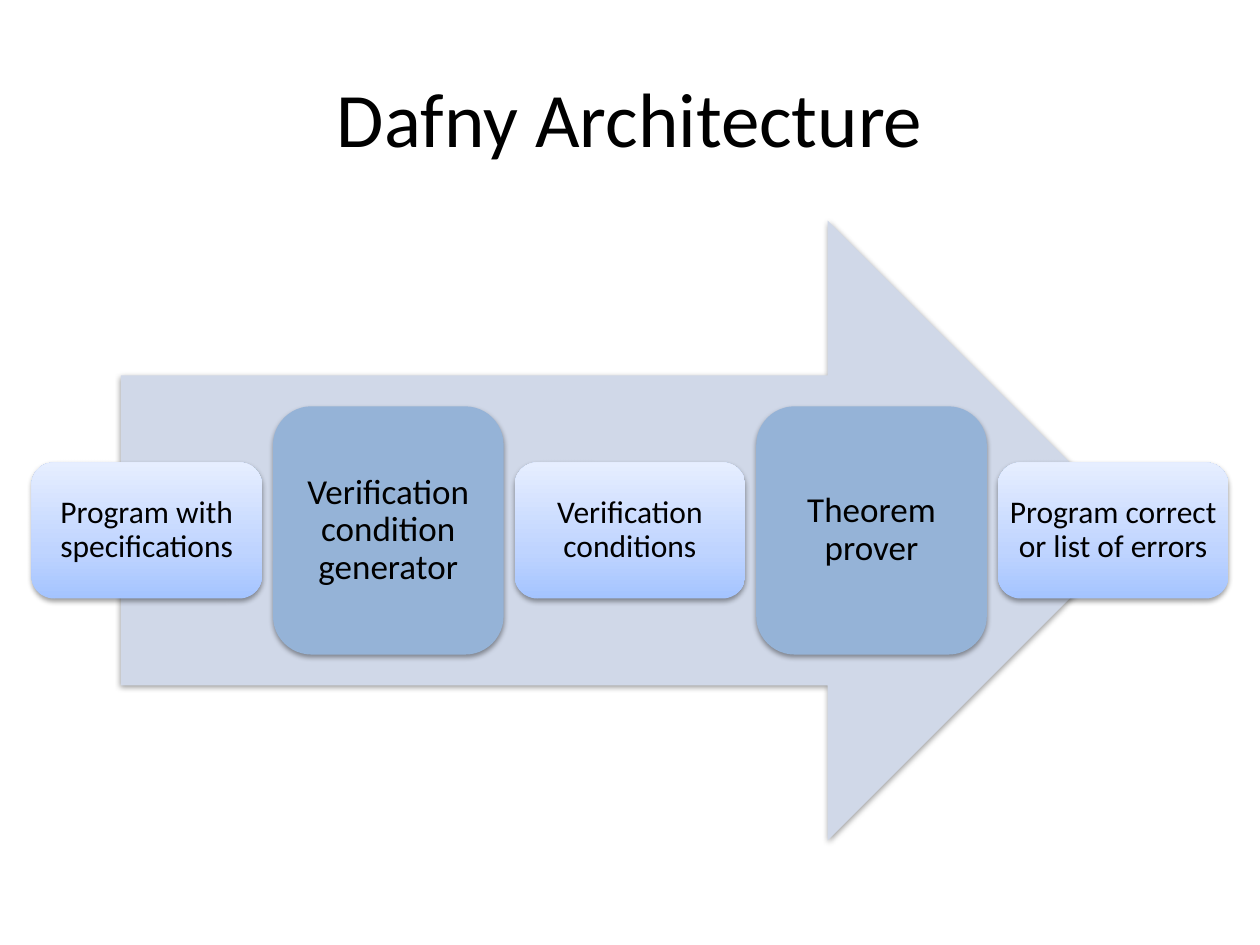
from dataclasses import dataclass

from lxml.etree import SubElement
from pptx import Presentation
from pptx.dml.color import RGBColor
from pptx.enum.shapes import MSO_SHAPE as Preset
from pptx.enum.text import MSO_ANCHOR as Anchor, PP_ALIGN as Align
from pptx.oxml.ns import qn
from pptx.shapes.autoshape import Shape
from pptx.slide import Slide
from pptx.text.text import TextFrame
from pptx.util import Inches, Pt


@dataclass(frozen=True)
class Theme:
    font: str = "Calibri"
    text: str = "000000"
    arrow: str = "D0D8E8"
    tool: str = "95B3D7"
    # Gradient stops (percent, colour), from the bottom up
    data: tuple = ((0, "A4C4FF"), (35, "BFD4FF"), (100, "E6EEFF"))
    shadow: str = "000000"
    title_size: int = 44
    tool_size: int = 20
    data_size: int = 18


@dataclass(frozen=True)
class Stage:
    label: str
    is_tool: bool = False


THEME = Theme()
STAGES = (
    Stage("Program with specifications"),
    Stage("Verification condition generator", is_tool=True),
    Stage("Verification conditions"),
    Stage("Theorem prover", is_tool=True),
    Stage("Program correct or list of errors"),
)

# Geometry in inches
SLIDE_WIDTH, SLIDE_HEIGHT = 10, 7.5
ARROW_LEFT, ARROW_TOP, ARROW_WIDTH, ARROW_HEIGHT = 0.96, 1.75, 8.07, 4.92
MIDDLE = ARROW_TOP + ARROW_HEIGHT / 2
MARGIN, STAGE_WIDTH = 0.25, 1.83
TOOL_HEIGHT, DATA_HEIGHT = 1.97, 1.08
PITCH = (SLIDE_WIDTH - 2 * MARGIN - STAGE_WIDTH) / (len(STAGES) - 1)
INSET = 0.02


def write_text(frame: TextFrame, text: str, size: int) -> None:
    """Put one centred paragraph in the frame."""
    frame.text = text
    frame.word_wrap = True
    frame.vertical_anchor = Anchor.MIDDLE
    para = frame.paragraphs[0]
    para.alignment = Align.CENTER
    for span in para.runs:
        span.font.name = THEME.font
        span.font.size = Pt(size)
        span.font.color.rgb = RGBColor.from_string(THEME.text)


def fill_solid(shape: Shape, color: str) -> None:
    shape.fill.solid()
    shape.fill.fore_color.rgb = RGBColor.from_string(color)


def fill_gradient(shape: Shape, stops: tuple) -> None:
    """Fill with a vertical gradient that runs from bottom to top."""
    shape.fill.gradient()
    shape.fill.gradient_angle = 90
    stop_list = shape.element.spPr.find(f".//{qn('a:gsLst')}")
    stop_list.clear()
    for percent, color in stops:
        stop = SubElement(stop_list, qn("a:gs"), pos=str(percent * 1000))
        SubElement(stop, qn("a:srgbClr"), val=color)


def add_shadow(shape: Shape) -> None:
    """Cast a soft shadow straight down."""
    shape.shadow.inherit = False
    effects = shape.element.spPr.find(qn("a:effectLst"))
    shadow = SubElement(
        effects, qn("a:outerShdw"), blurRad=str(Pt(3.1)), dist=str(Pt(1.6)),
        dir=str(90 * 60000), rotWithShape="0",
    )
    color = SubElement(shadow, qn("a:srgbClr"), val=THEME.shadow)
    SubElement(color, qn("a:alpha"), val="38000")


def add_block(page: Slide, preset: Preset, left: float, width: float, height: float) -> Shape:
    """Add an outline-free shape centred on the middle of the arrow."""
    block = page.shapes.add_shape(
        preset, Inches(left), Inches(MIDDLE - height / 2), Inches(width), Inches(height)
    )
    block.line.fill.background()
    add_shadow(block)
    return block


def add_stage(page: Slide, stage: Stage, left: float) -> None:
    height = TOOL_HEIGHT if stage.is_tool else DATA_HEIGHT
    box = add_block(page, Preset.ROUNDED_RECTANGLE, left, STAGE_WIDTH, height)
    if stage.is_tool:
        fill_solid(box, THEME.tool)
    else:
        fill_gradient(box, THEME.data)
    frame = box.text_frame
    frame.margin_left = frame.margin_right = Inches(INSET)
    frame.margin_top = frame.margin_bottom = Inches(INSET)
    write_text(frame, stage.label, THEME.tool_size if stage.is_tool else THEME.data_size)
    frame.paragraphs[0].line_spacing = 0.9


def main() -> None:
    deck = Presentation()
    deck.slide_width, deck.slide_height = Inches(SLIDE_WIDTH), Inches(SLIDE_HEIGHT)
    page = deck.slides.add_slide(deck.slide_layouts[5])

    # Title
    title = page.shapes.title
    title.left, title.top = Inches(0.5), Inches(0.3)
    title.width, title.height = Inches(9), Inches(1.25)
    write_text(title.text_frame, "Dafny Architecture", THEME.title_size)

    # Arrow behind the stages
    arrow = add_block(page, Preset.RIGHT_ARROW, ARROW_LEFT, ARROW_WIDTH, ARROW_HEIGHT)
    fill_solid(arrow, THEME.arrow)

    # Stages, evenly spaced from left to right
    for index, stage in enumerate(STAGES):
        add_stage(page, stage, MARGIN + index * PITCH)

    deck.save("out.pptx")


if __name__ == "__main__":
    main()
